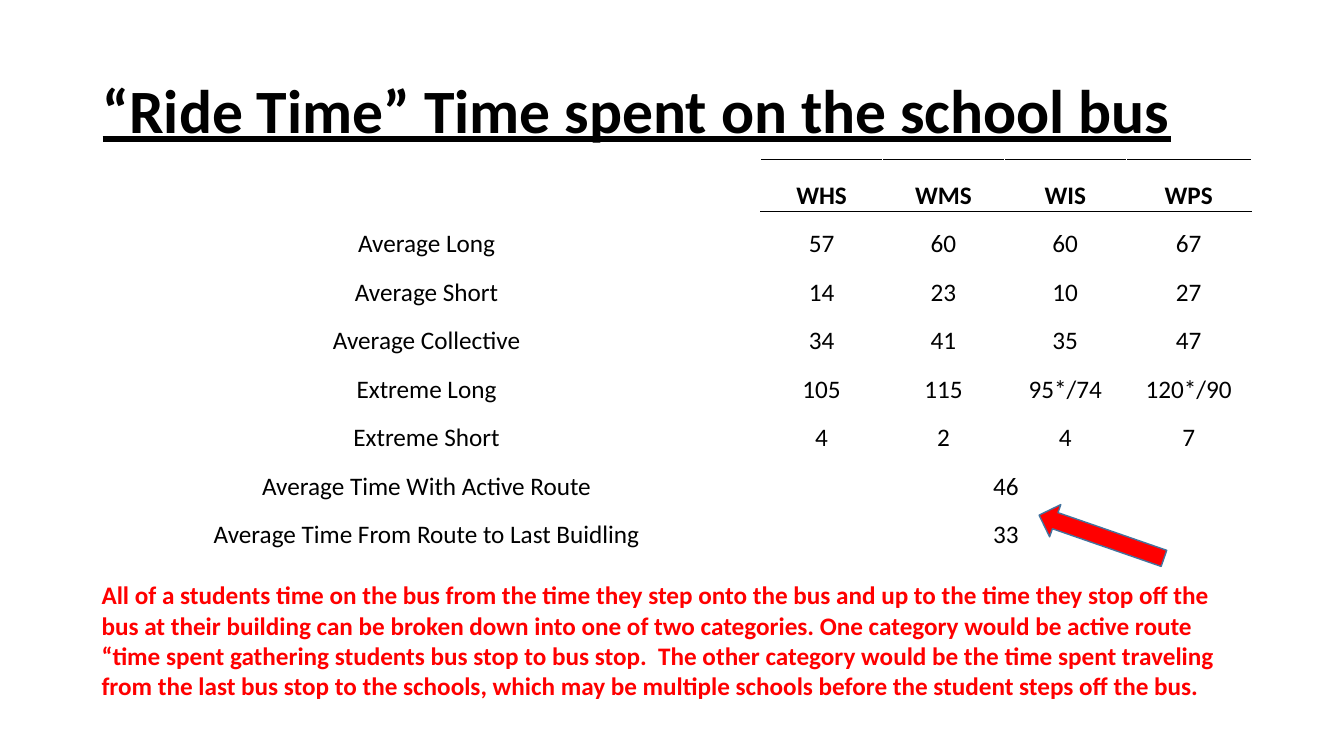
"""Builds the slide on time spent riding the school bus."""
from collections import namedtuple

from lxml import etree
from pptx import Presentation
from pptx.dml.color import RGBColor
from pptx.enum.shapes import MSO_SHAPE
from pptx.enum.text import MSO_ANCHOR, MSO_AUTO_SIZE, PP_ALIGN
from pptx.oxml.ns import qn
from pptx.util import Cm, Pt

UP_ARROW = MSO_SHAPE.UP_ARROW
MIDDLE, BOTTOM = MSO_ANCHOR.MIDDLE, MSO_ANCHOR.BOTTOM
CENTER, LEFT = PP_ALIGN.CENTER, PP_ALIGN.LEFT
NO_FIT = MSO_AUTO_SIZE.NONE
FIT_SHAPE = MSO_AUTO_SIZE.SHAPE_TO_FIT_TEXT

Box = namedtuple("Box", "left top width height")
BLACK, RED, OUTLINE = "000000", "FF0000", "43739E"
TITLE_FORMAT = {"name": "Calibri", "size": Pt(44), "bold": True, "underline": True}
BOLD_FORMAT = {"name": "Calibri", "size": Pt(18), "bold": True}
PLAIN_FORMAT = {**BOLD_FORMAT, "bold": False}
CELL_FORMAT = {"margin_left": Cm(0.02), "margin_right": Cm(0.02),
               "margin_top": Cm(0.02), "margin_bottom": 0,
               "vertical_anchor": BOTTOM}

TITLE = "“Ride Time” Time spent on the school bus"
NOTE = (
    "All of a students time on the bus from the time they step onto the bus "
    "and up to the time they stop off the bus at their building can be broken "
    "down into one of two categories. One category would be active route "
    "“time spent gathering students bus stop to bus stop.  The other category "
    "would be the time spent traveling from the last bus stop to the schools, "
    "which may be multiple schools before the student steps off the bus."
)
SCHOOLS = ["WHS", "WMS", "WIS", "WPS"]
RIDE_TIMES = [
    ("Average Long", ["57", "60", "60", "67"]),
    ("Average Short", ["14", "23", "10", "27"]),
    ("Average Collective", ["34", "41", "35", "47"]),
    ("Extreme Long", ["105", "115", "95*/74", "120*/90"]),
    ("Extreme Short", ["4", "2", "4", "7"]),
    ("Average Time With Active Route", ["46"]),
    ("Average Time From Route to Last Buidling", ["33"]),
]
LABEL_COLUMNS = 10
COLUMN_WIDTHS = [3.07] + [1.53] * (LABEL_COLUMNS - 1) + [3.07] * 3 + [3.15]
HEADER_HEIGHT = 1.3


def color(value):
    """Return the colour for a hex string."""
    return RGBColor.from_string(value)


def lengths(box):
    """Return the four sides of a box as lengths."""
    return [Cm(side) for side in box]


def apply_format(target, values):
    """Set each attribute named in a dict of format values."""
    for name, value in values.items():
        setattr(target, name, value)


def write(frame, text, font_format, ink, alignment):
    """Write one formatted paragraph into a text frame and return it."""
    para = frame.paragraphs[0]
    para.alignment = alignment
    span = para.add_run()
    span.text = text
    apply_format(span.font, font_format)
    span.font.color.rgb = color(ink)
    return para


def add_border(cell, side, points):
    """Draw a black border on the top (T) or bottom (B) of a cell."""
    properties = cell._tc.get_or_add_tcPr()
    line = etree.Element(qn(f"a:ln{side}"), w=str(Pt(points)))
    fill = etree.SubElement(line, qn("a:solidFill"))
    etree.SubElement(fill, qn("a:srgbClr"), val=BLACK)
    properties.insert(len(properties.findall(qn("a:lnT"))), line)


def add_title(page, box):
    """Place the underlined heading in the title placeholder."""
    title = page.shapes.title
    title.left, title.top, title.width, title.height = lengths(box)
    frame = title.text_frame
    apply_format(frame, {"word_wrap": True, "auto_size": NO_FIT,
                         "vertical_anchor": MIDDLE})
    write(frame, TITLE, TITLE_FORMAT, BLACK, LEFT).line_spacing = 0.9


def add_ride_times(page, box):
    """Place the table of ride times per school."""
    table = page.shapes.add_table(
        len(RIDE_TIMES) + 1, len(COLUMN_WIDTHS), *lengths(box)).table
    apply_format(table, {"first_row": False, "horz_banding": False})
    for column, width in zip(table.columns, COLUMN_WIDTHS):
        column.width = Cm(width)
    row_height = (box.height - HEADER_HEIGHT) / len(RIDE_TIMES)
    for index, row in enumerate(table.rows):
        row.height = Cm(row_height if index else HEADER_HEIGHT)
    for cell in table.iter_cells():
        apply_format(cell, CELL_FORMAT)
        cell.fill.background()

    for column, school in enumerate(SCHOOLS, LABEL_COLUMNS):
        header = table.cell(0, column)
        write(header.text_frame, school, BOLD_FORMAT, BLACK, CENTER)
        add_border(header, "T", 0.5)
        add_border(header, "B", 1)
        add_border(table.cell(1, column), "T", 1)

    for row, (label, times) in enumerate(RIDE_TIMES, 1):
        label_cell = table.cell(row, 0)
        label_cell.merge(table.cell(row, LABEL_COLUMNS - 1))
        write(label_cell.text_frame, label, PLAIN_FORMAT, BLACK, CENTER)
        if len(times) == 1:
            table.cell(row, LABEL_COLUMNS).merge(
                table.cell(row, len(COLUMN_WIDTHS) - 1))
        for column, time in enumerate(times, LABEL_COLUMNS):
            write(table.cell(row, column).text_frame, time,
                  PLAIN_FORMAT, BLACK, CENTER)


def add_note(page, box):
    """Place the red explanation below the table."""
    frame = page.shapes.add_textbox(*lengths(box)).text_frame
    apply_format(frame, {"word_wrap": True, "auto_size": FIT_SHAPE})
    write(frame, NOTE, BOLD_FORMAT, RED, LEFT)


def add_arrow(page, box):
    """Place the red arrow that points at the collective averages."""
    arrow = page.shapes.add_shape(UP_ARROW, *lengths(box))
    arrow.rotation = 289.1
    arrow.shadow.inherit = False
    arrow.fill.solid()
    arrow.fill.fore_color.rgb = color(RED)
    arrow.line.color.rgb = color(OUTLINE)
    arrow.line.width = Pt(1)


def main():
    """Build the deck and save it."""
    deck = Presentation()
    deck.slide_width, deck.slide_height = Cm(33.87), Cm(19.05)
    page = deck.slides.add_slide(deck.slide_layouts.get_by_name("Title Only"))
    add_title(page, Box(2.33, 1.01, 29.21, 3.68))
    add_ride_times(page, Box(2.33, 4.02, 29.2, 9.86))
    add_note(page, Box(2.31, 14.48, 29.21, 3.33))
    add_arrow(page, Box(27.33, 11.86, 0.86, 3.33))
    deck.save("out.pptx")


if __name__ == "__main__":
    main()
